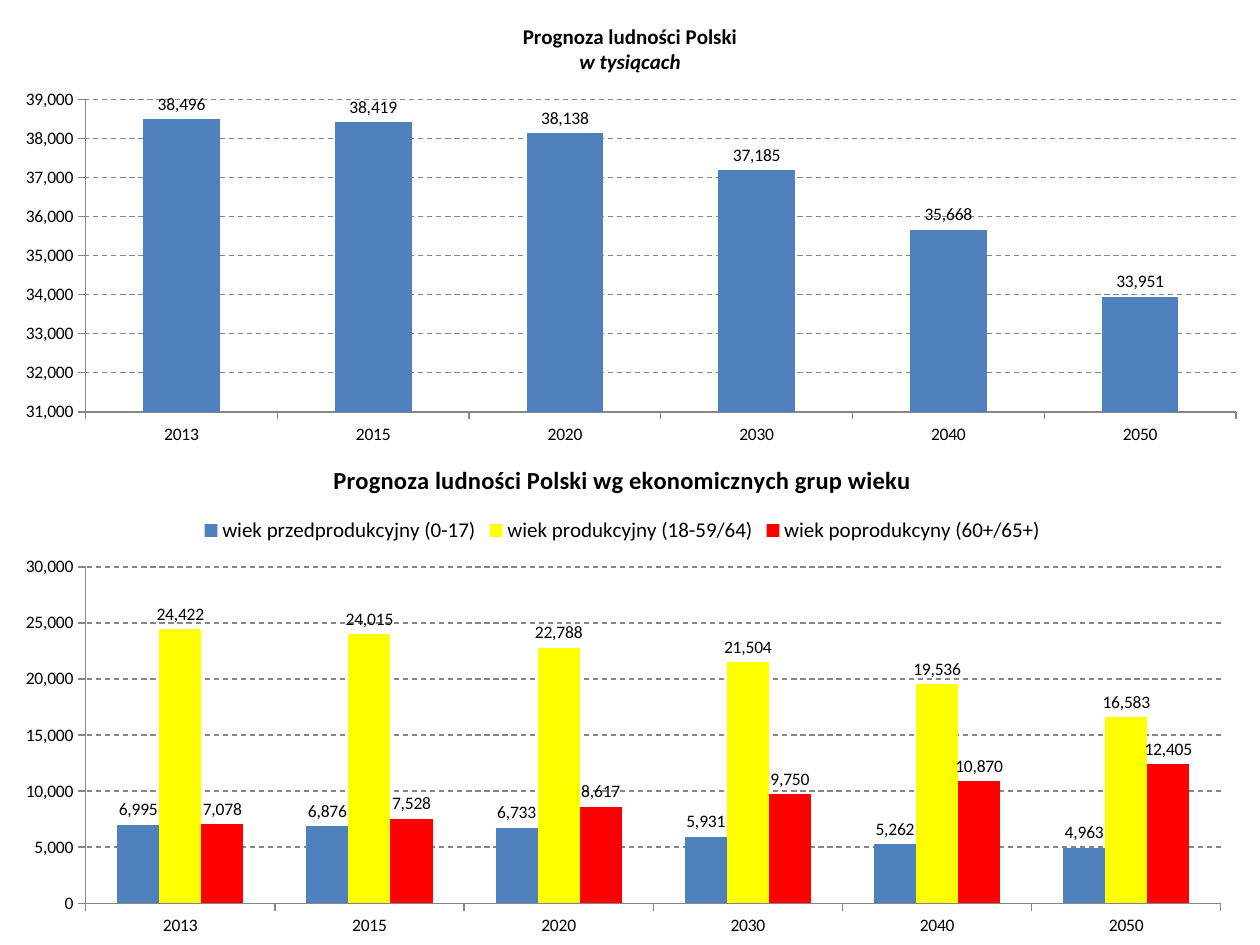
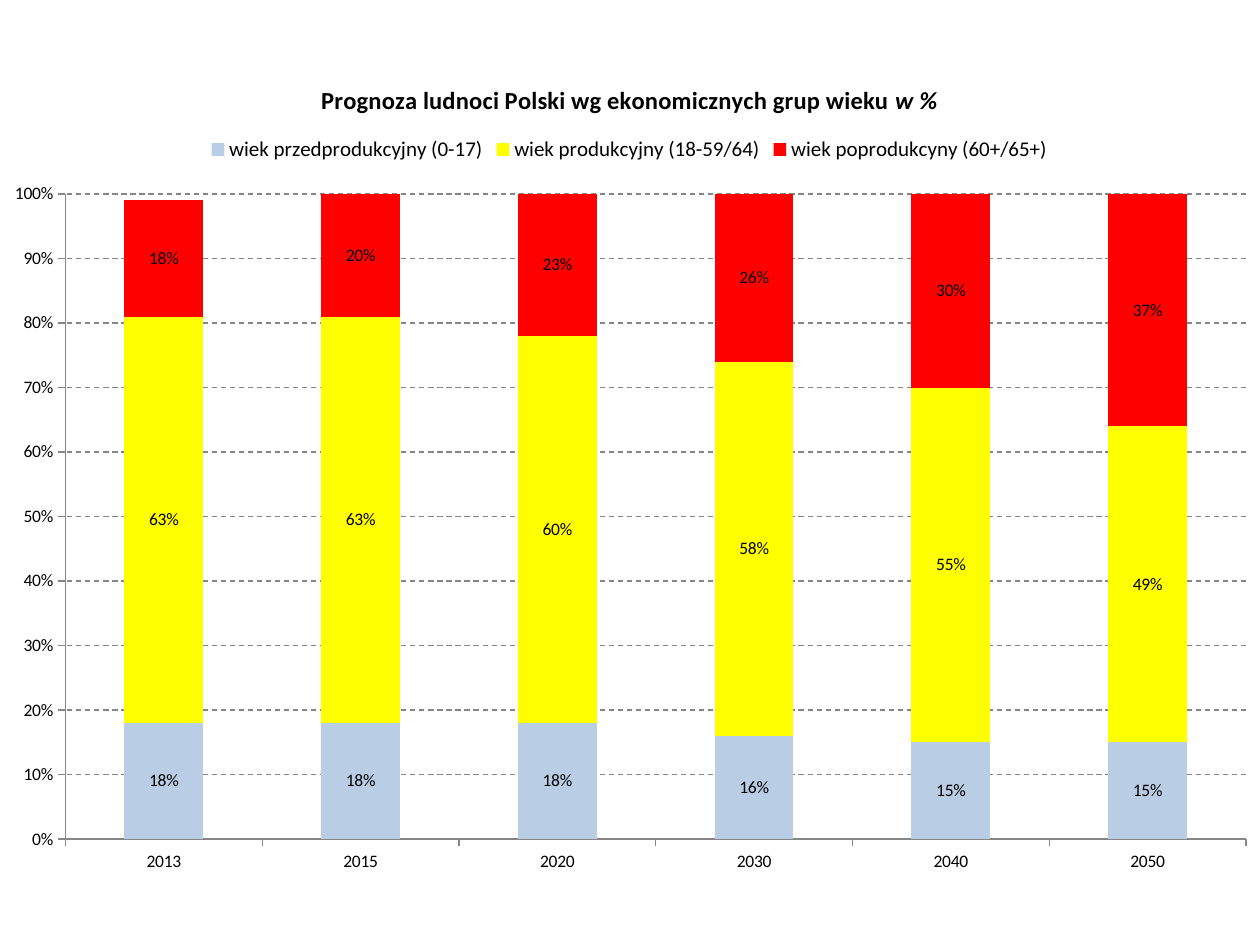
from lxml import etree
from pptx import Presentation
from pptx.chart.data import CategoryChartData
from pptx.dml.color import RGBColor
from pptx.enum.chart import XL_CHART_TYPE, XL_LABEL_POSITION, XL_LEGEND_POSITION, XL_TICK_MARK
from pptx.enum.dml import MSO_LINE
from pptx.oxml.ns import qn
from pptx.util import Inches, Pt

BLACK = RGBColor(0x00, 0x00, 0x00)
GREY = RGBColor(0x86, 0x86, 0x86)
BLUE = RGBColor(0x4F, 0x81, 0xBD)
PALE_BLUE = RGBColor(0xB9, 0xCD, 0xE5)
YELLOW = RGBColor(0xFF, 0xFF, 0x00)
RED = RGBColor(0xFF, 0x00, 0x00)
FONT = "Calibri"

YEARS = ["2013", "2015", "2020", "2030", "2040", "2050"]
POPULATION = {"Series 1": [38496, 38419, 38138, 37185, 35668, 33951]}
AGE_GROUPS = {
    "wiek przedprodukcyjny (0-17)": [6995, 6876, 6733, 5931, 5262, 4963],
    "wiek produkcyjny (18-59/64)": [24422, 24015, 22788, 21504, 19536, 16583],
    "wiek poprodukcyny (60+/65+)": [7078, 7528, 8617, 9750, 10870, 12405],
}
YEAR_TOTALS = [sum(groups) for groups in zip(*AGE_GROUPS.values())]
AGE_SHARES = {
    name: [round(count / total, 2) for count, total in zip(counts, YEAR_TOTALS)]
    for name, counts in AGE_GROUPS.items()
}

SLIDES = [
    [
        dict(title=[[("Prognoza ludności Polski", False)], [("w tysiącach", True)]],
             title_size=12, box=(0, 0.02, 10, 3.57), plot=(0.68, 0.79, 9.13, 2.48),
             series=POPULATION, colors=[BLUE], scale=(31000, 39000, 1000)),
        dict(title=[[("Prognoza ludności Polski wg ekonomicznych grup wieku", False)]],
             title_size=14, box=(0, 3.51, 9.88, 3.99), plot=(0.68, 4.5, 9.01, 2.67),
             series=AGE_GROUPS, colors=[BLUE, YELLOW, RED], scale=(0, 30000, 5000)),
    ],
    [
        dict(title=[[("Prognoza ludnoci Polski wg ekonomicznych grup wieku ", False),
                     ("w %", True)]],
             title_size=14, box=(-0.09, 0.45, 10.17, 6.59), plot=(0.52, 1.54, 9.37, 5.12),
             series=AGE_SHARES, colors=[PALE_BLUE, YELLOW, RED], scale=(0, 1, 0.1),
             stacked=True),
    ],
]


def set_font(font, size):
    font.name = FONT
    font.size = Pt(size)
    font.color.rgb = BLACK


def write_title(chart, lines, size):
    frame = chart.chart_title.text_frame
    for i, line in enumerate(lines):
        paragraph = frame.paragraphs[0] if i == 0 else frame.add_paragraph()
        set_font(paragraph.font, size)
        paragraph.font.bold = True
        for words, italic in line:
            run = paragraph.add_run()
            run.text = words
            set_font(run.font, size)
            run.font.bold = True
            run.font.italic = italic


def place_plot(chart, box, plot):
    left, top, width, height = box
    x, y, w, h = plot
    fractions = ((x - left) / width, (y - top) / height, w / width, h / height)
    area = chart.plots[0]._element.getparent()
    for old in area.findall(qn("c:layout")):
        area.remove(old)
    layout = etree.Element(qn("c:layout"))
    manual = etree.SubElement(layout, qn("c:manualLayout"))
    settings = [("layoutTarget", "inner"), ("xMode", "edge"), ("yMode", "edge")]
    settings += zip("xywh", map(str, fractions))
    for tag, value in settings:
        etree.SubElement(manual, qn("c:" + tag)).set("val", value)
    area.insert(0, layout)


def style_axes(chart, scale, number_format):
    values = chart.value_axis
    values.minimum_scale, values.maximum_scale, values.major_unit = scale
    values.tick_labels.number_format = number_format
    values.tick_labels.number_format_is_linked = False
    values.has_major_gridlines = True
    grid = values.major_gridlines.format.line
    grid.color.rgb = GREY
    grid.width = Pt(0.75)
    grid.dash_style = MSO_LINE.DASH
    for axis in (chart.category_axis, values):
        axis.major_tick_mark = XL_TICK_MARK.OUTSIDE
        axis.minor_tick_mark = XL_TICK_MARK.NONE
        axis.format.line.color.rgb = GREY
        axis.format.line.width = Pt(0.75)
        set_font(axis.tick_labels.font, 10)


def add_forecast(slide, title, title_size, box, plot, series, colors, scale, stacked=False):
    number_format = "0%" if stacked else "#,##0"
    data = CategoryChartData(number_format=number_format)
    data.categories = YEARS
    for name, values in series.items():
        data.add_series(name, values)
    kind = XL_CHART_TYPE.COLUMN_STACKED if stacked else XL_CHART_TYPE.COLUMN_CLUSTERED
    chart = slide.shapes.add_chart(kind, *map(Inches, box), data).chart
    set_font(chart.font, 10)
    write_title(chart, title, title_size)
    place_plot(chart, box, plot)
    style_axes(chart, scale, number_format)

    chart.has_legend = len(series) > 1
    if chart.has_legend:
        chart.legend.position = XL_LEGEND_POSITION.TOP
        chart.legend.include_in_layout = False
        set_font(chart.legend.font, 12)

    columns = chart.plots[0]
    columns.vary_by_categories = False
    columns.gap_width = 150
    columns.overlap = 100 if stacked else 0
    for group, color in zip(columns.series, colors):
        group.format.fill.solid()
        group.format.fill.fore_color.rgb = color
        group.invert_if_negative = False
        labels = group.data_labels
        labels.show_value = True
        labels.number_format = number_format
        labels.number_format_is_linked = False
        labels.position = XL_LABEL_POSITION.CENTER if stacked else XL_LABEL_POSITION.OUTSIDE_END
        set_font(labels.font, 10)


def main():
    deck = Presentation()
    deck.slide_width, deck.slide_height = Inches(10), Inches(7.5)
    for forecasts in SLIDES:
        slide = deck.slides.add_slide(deck.slide_layouts[6])
        for forecast in forecasts:
            add_forecast(slide, **forecast)
    deck.save("out.pptx")


if __name__ == "__main__":
    main()
